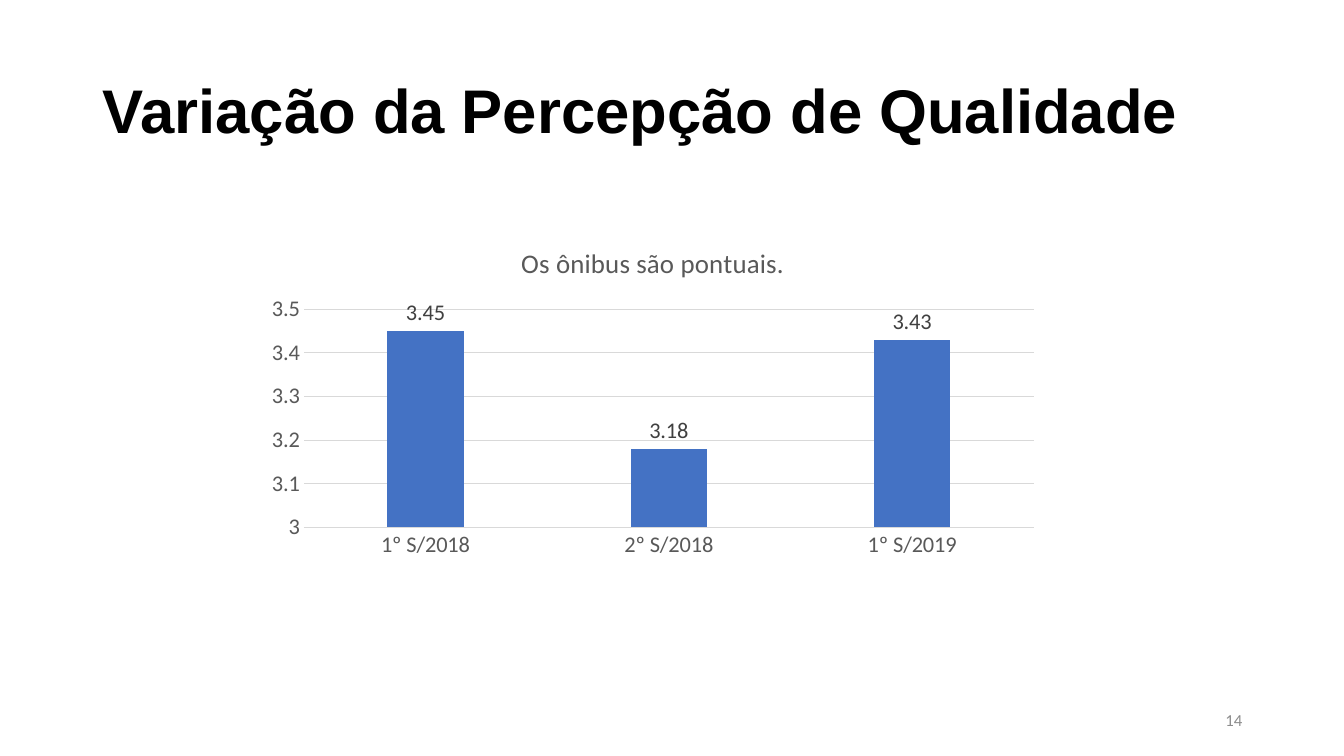
from pptx import Presentation
from pptx.chart.data import CategoryChartData as ChartData
from pptx.dml.color import RGBColor
from pptx.enum.chart import XL_CHART_TYPE as Kind
from pptx.enum.chart import XL_LABEL_POSITION as Spot
from pptx.enum.chart import XL_TICK_MARK as Tick
from pptx.enum.text import MSO_ANCHOR as Anchor
from pptx.enum.text import PP_ALIGN as Align
from pptx.util import Pt

PX = 9144  # EMU per px, 100 px to the inch
BLACK = RGBColor(0x00, 0x00, 0x00)
BLUE = RGBColor(0x44, 0x72, 0xC4)
DARK = RGBColor(0x40, 0x40, 0x40)
GRAY = RGBColor(0x59, 0x59, 0x59)
PALE = RGBColor(0x8C, 0x8C, 0x8C)
RULE = RGBColor(0xD9, 0xD9, 0xD9)

TOPIC = "Os ônibus são pontuais."
SCORES = {"1º S/2018": 3.45, "2º S/2018": 3.18, "1º S/2019": 3.43}


def px(*sizes):
    return [size * PX for size in sizes]


def style(font, size, color, name="Calibri", bold=False):
    font.size = Pt(size)
    font.name = name
    font.bold = bold
    font.color.rgb = color


def add_text(slide, box, text, size, color, align=Align.LEFT, **look):
    frame = slide.shapes.add_textbox(*px(*box)).text_frame
    frame.word_wrap = True
    frame.vertical_anchor = Anchor.MIDDLE
    para = frame.paragraphs[0]
    para.alignment = align
    para.line_spacing = 0.9
    run = para.add_run()
    run.text = text
    style(run.font, size, color, **look)


def set_rule(line):
    line.color.rgb = RULE
    line.width = Pt(0.75)


def set_axes(chart):
    names, values = chart.category_axis, chart.value_axis
    for axis in (names, values):
        axis.major_tick_mark = axis.minor_tick_mark = Tick.NONE
        style(axis.tick_labels.font, 16, GRAY)
    set_rule(names.format.line)
    values.format.line.fill.background()
    set_rule(values.major_gridlines.format.line)
    values.minimum_scale = 3
    values.maximum_scale = 3.5
    values.major_unit = 0.1


def add_bars(slide, box, title, scores):
    data = ChartData()
    data.categories = list(scores)
    data.add_series(title, list(scores.values()))
    chart = slide.shapes.add_chart(Kind.COLUMN_CLUSTERED, *px(*box), data).chart
    style(chart.font, 16, BLACK)
    chart.has_legend = False
    chart.has_title = True
    run = chart.chart_title.text_frame.paragraphs[0].add_run()
    run.text = title
    style(run.font, 19.2, GRAY)
    set_axes(chart)

    plot = chart.plots[0]
    plot.vary_by_categories = False
    plot.gap_width = 219
    plot.overlap = -27
    bars = plot.series[0]
    bars.format.fill.solid()
    bars.format.fill.fore_color.rgb = BLUE
    labels = bars.data_labels
    labels.show_value = True
    labels.position = Spot.OUTSIDE_END
    style(labels.font, 16, DARK)


def main():
    deck = Presentation()
    deck.slide_width, deck.slide_height = px(1333, 750)
    slide = deck.slides.add_slide(deck.slide_layouts[6])
    add_text(slide, (92, 40, 1150, 145), "Variação da Percepção de Qualidade",
             44, BLACK, name="Arial", bold=True)
    add_text(slide, (942, 695, 300, 40), "14", 12, PALE, Align.RIGHT)
    add_bars(slide, (254, 225, 787, 336), TOPIC, SCORES)
    deck.save("out.pptx")


if __name__ == "__main__":
    main()
